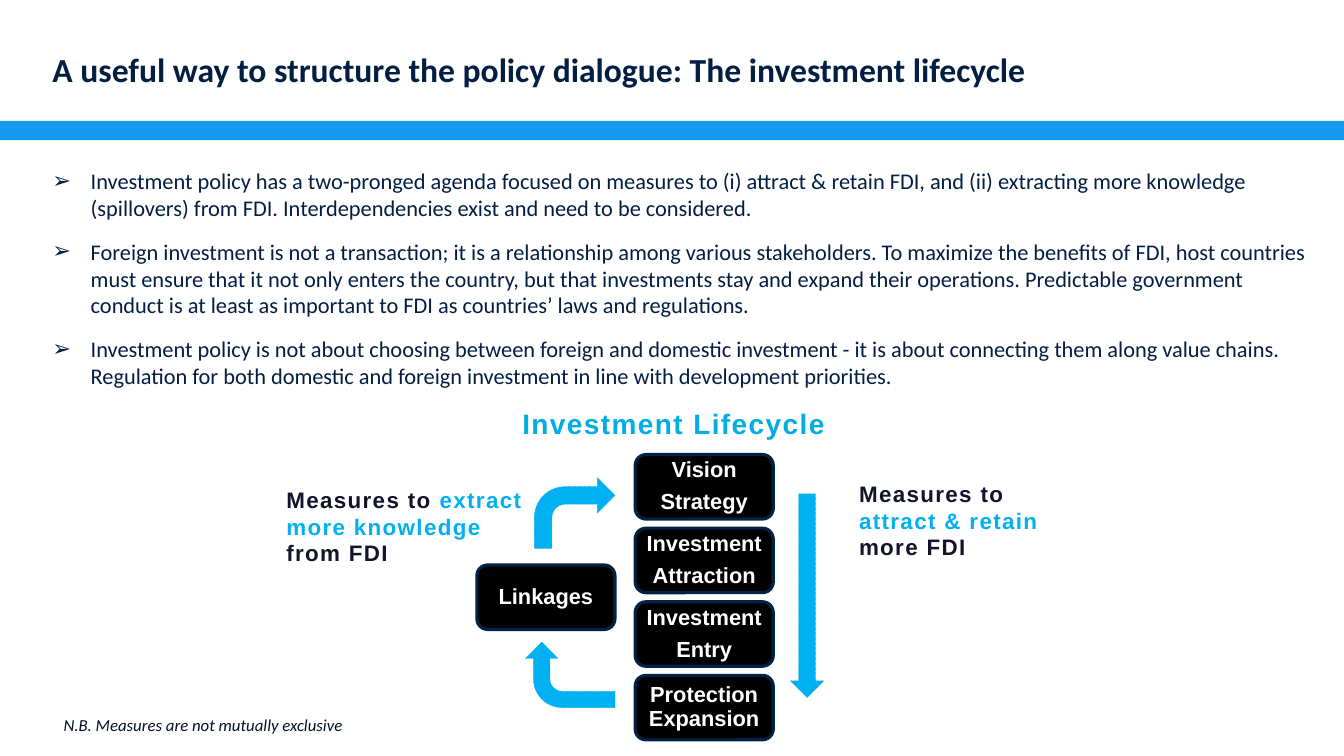
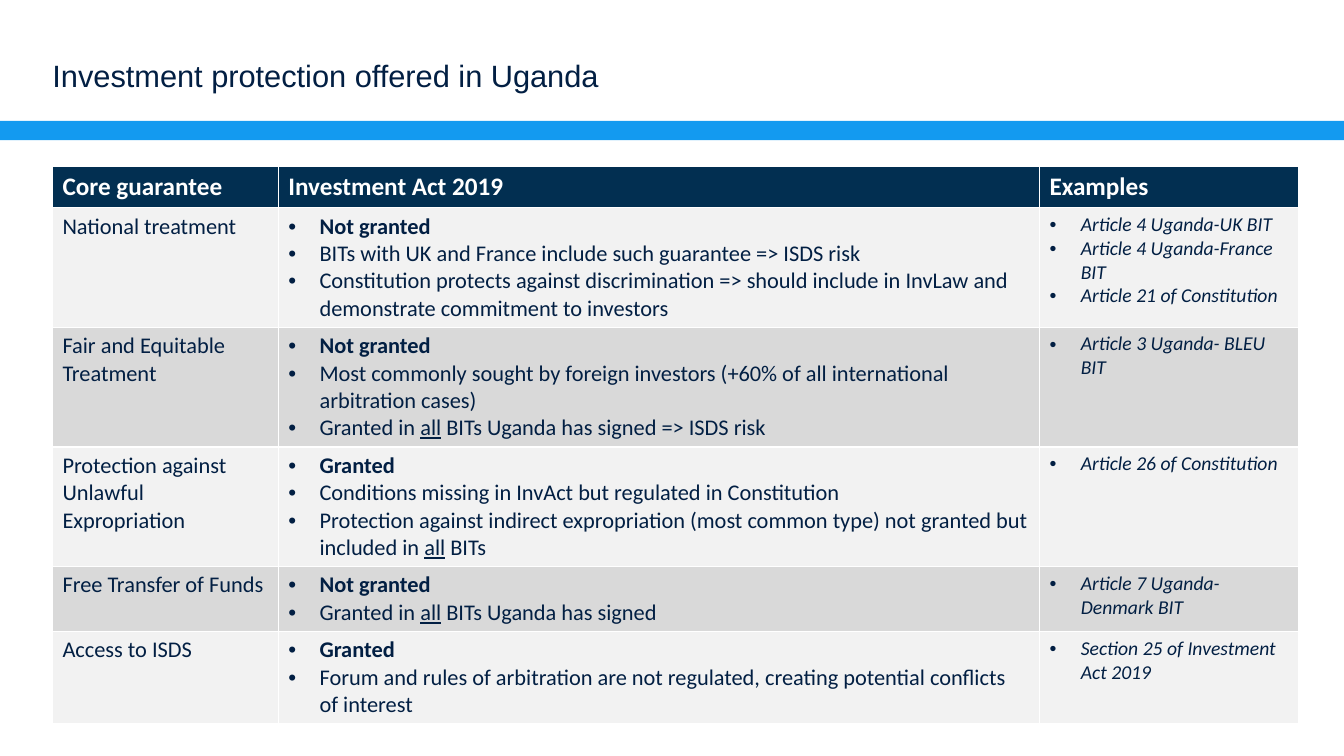
from dataclasses import dataclass

from lxml import etree
from pptx import Presentation
from pptx.dml.color import RGBColor
from pptx.enum.dml import MSO_LINE
from pptx.enum.shapes import MSO_SHAPE
from pptx.enum.text import MSO_ANCHOR, MSO_AUTO_SIZE, PP_ALIGN
from pptx.oxml.ns import qn
from pptx.util import Inches, Pt

LEFT, CENTER = PP_ALIGN.LEFT, PP_ALIGN.CENTER
TOP, MIDDLE = MSO_ANCHOR.TOP, MSO_ANCHOR.MIDDLE
NO_AUTOFIT = MSO_AUTO_SIZE.NONE
ROUND_DOT = MSO_LINE.ROUND_DOT
RECTANGLE = MSO_SHAPE.RECTANGLE
ROUNDED = MSO_SHAPE.ROUNDED_RECTANGLE
BENT_ARROW, DOWN_ARROW = MSO_SHAPE.BENT_ARROW, MSO_SHAPE.DOWN_ARROW

COLORS = {
    "band": "139AF0", "navy": "021F43", "note": "031227", "ink": "121429",
    "heading": "00ADE4", "cycle": "00B0F0", "box": "000000", "box_line": "002345",
    "white": "FFFFFF", "header": "022F51", "row_odd": "F2F2F2", "row_even": "D9D9D9",
}

SLIDE_W, SLIDE_H = 13.33, 7.5
MARGIN = 0.52
BAND_TOP, BAND_H = 0.16 * SLIDE_H, 0.19
TITLE_W, TITLE_H = SLIDE_W - 2 * MARGIN, 0.83

# The lifecycle column: boxes of one size at an equal pitch
STEP_X, STEP_Y, STEP_PITCH = 6.3, 4.51, 0.73
STEP_W, STEP_H = 1.37, 0.64
LINKAGES_X = STEP_X - 1.57
LINKAGES_Y = STEP_Y + 1.5 * STEP_PITCH

TABLE_TOP = 1.65
COLUMN_WIDTHS = (2.24, 7.55, 2.57)
HEADER_H, LINE_H, CELL_PADDING = 0.41, 0.27, 0.1


@dataclass(frozen=True)
class Box:
    x: float
    y: float
    w: float
    h: float

    def emu(self) -> tuple:
        return tuple(Inches(v) for v in (self.x, self.y, self.w, self.h))


@dataclass(frozen=True)
class TextStyle:
    size: float
    color: str
    font: str = "Calibri"
    bold: bool = False
    italic: bool = False
    spacing: int = 0  # hundredths of a point


@dataclass(frozen=True)
class Step:
    lines: tuple
    x: float
    y: float


@dataclass(frozen=True)
class Arrow:
    preset: int
    box: Box
    rotation: float = 0


@dataclass(frozen=True)
class Label:
    """Text between bars is shown in the accent colour."""
    text: str
    box: Box
    style: TextStyle
    align: int = LEFT


@dataclass(frozen=True)
class Guarantee:
    """Text between bars is underlined; line_count is that of the tallest cell."""
    name: str
    verdict: str
    remarks: tuple
    examples: tuple
    line_count: int


BODY = TextStyle(16, "navy")
STEP_TEXT = TextStyle(15.6, "white", "Arial", bold=True)
SIDE_TEXT = TextStyle(16, "ink", "Arial", bold=True, spacing=100)
EXAMPLE = TextStyle(14, "navy", italic=True)
HEADER = TextStyle(18, "white", bold=True)

POLICY_POINTS = (
    "Investment policy has a two-pronged agenda focused on measures to (i) attract & retain FDI, "
    "and (ii) extracting more knowledge (spillovers) from FDI. Interdependencies exist and need to "
    "be considered.",
    "Foreign investment is not a transaction; it is a relationship among various stakeholders. To "
    "maximize the benefits of FDI, host countries must ensure that it not only enters the country, "
    "but that investments stay and expand their operations. Predictable government conduct is at "
    "least as important to FDI as countries’ laws and regulations.",
    "Investment policy is not about choosing between foreign and domestic investment - it is about "
    "connecting them along value chains. Regulation for both domestic and foreign investment in "
    "line with development priorities.",
)

STAGES = (("Vision", "Strategy"), ("Investment", "Attraction"),
          ("Investment", "Entry"), ("Protection Expansion",))
STEPS = [Step(lines, STEP_X, STEP_Y + i * STEP_PITCH) for i, lines in enumerate(STAGES)]
STEPS.append(Step(("Linkages",), LINKAGES_X, LINKAGES_Y))

ARROWS = (
    Arrow(BENT_ARROW, Box(5.3, 4.74, 0.8, 0.7)),
    Arrow(BENT_ARROW, Box(5.33, 6.25, 0.65, 0.89), 270),
    Arrow(DOWN_ARROW, Box(7.84, 4.9, 0.33, 2.02)),
)

LABELS = (
    Label("Investment Lifecycle", Box(4.69, 4.03, 3.98, 0.33),
          TextStyle(20, "heading", "Arial", bold=True, spacing=100), CENTER),
    Label("Measures to |attract & retain |more FDI", Box(8.52, 4.76, 1.91, 0.8), SIDE_TEXT),
    Label("Measures to |extract more knowledge |from FDI", Box(2.84, 4.82, 2.47, 0.8), SIDE_TEXT),
    Label("N.B. Measures are not mutually exclusive", Box(0.63, 7.09, 5.15, 0.2),
          TextStyle(12, "note", italic=True)),
)

TABLE_HEADINGS = ("Core guarantee", "Investment Act 2019", "Examples")
GUARANTEES = (
    Guarantee("National treatment", "Not granted",
              ("BITs with UK and France include such guarantee => ISDS risk",
               "Constitution protects against discrimination => should include in InvLaw and "
               "demonstrate commitment to investors"),
              ("Article 4 Uganda-UK BIT", "Article 4 Uganda-France BIT",
               "Article 21 of Constitution"), 4),
    Guarantee("Fair and Equitable Treatment", "Not granted",
              ("Most commonly sought by foreign investors (+60% of all international "
               "arbitration cases)",
               "Granted in |all| BITs Uganda has signed => ISDS risk"),
              ("Article 3 Uganda- BLEU BIT",), 4),
    Guarantee("Protection against Unlawful Expropriation", "Granted",
              ("Conditions missing in InvAct but regulated in Constitution",
               "Protection against indirect expropriation (most common type) not granted but "
               "included in |all| BITs"),
              ("Article 26 of Constitution",), 4),
    Guarantee("Free Transfer of Funds", "Not granted",
              ("Granted in |all| BITs Uganda has signed",),
              ("Article 7 Uganda- Denmark BIT",), 2),
    Guarantee("Access to ISDS", "Granted",
              ("Forum and rules of arbitration are not regulated, creating potential conflicts "
               "of interest",),
              ("Section 25 of Investment Act 2019",), 3),
)


def rgb(name: str) -> RGBColor:
    return RGBColor.from_string(COLORS[name])


def style_paragraph(paragraph, style: TextStyle, align=LEFT) -> None:
    paragraph.alignment = align
    font = paragraph.font
    font.name, font.size = style.font, Pt(style.size)
    font.bold, font.italic = style.bold, style.italic
    font.color.rgb = rgb(style.color)
    if style.spacing:
        paragraph._p.pPr.find(qn("a:defRPr")).set("spc", str(style.spacing))


def add_runs(paragraph, text: str) -> list:
    """Add a run for each part between bars and return every second one."""
    runs = []
    for part in text.split("|"):
        run = paragraph.add_run()
        run.text = part
        runs.append(run)
    return runs[1::2]


def set_bullet(paragraph, symbol: str, indent: float) -> None:
    properties = paragraph._p.get_or_add_pPr()
    properties.set("marL", str(Inches(indent)))
    properties.set("indent", str(-Inches(indent)))
    etree.SubElement(properties, qn("a:buFont")).set("typeface", "Arial")
    etree.SubElement(properties, qn("a:buChar")).set("char", symbol)


def next_paragraph(frame, index: int):
    return frame.add_paragraph() if index else frame.paragraphs[0]


def prepare_frame(frame, inset: float = 0, anchor=TOP) -> None:
    frame.word_wrap = True
    frame.auto_size = NO_AUTOFIT
    frame.vertical_anchor = anchor
    frame.margin_left = frame.margin_right = Inches(inset)
    frame.margin_top = frame.margin_bottom = Inches(inset)


def place(shape, box: Box) -> None:
    shape.left, shape.top, shape.width, shape.height = box.emu()


def add_filled(slide, preset, box: Box, fill: str):
    shape = slide.shapes.add_shape(preset, *box.emu())
    shape.shadow.inherit = False
    shape.fill.solid()
    shape.fill.fore_color.rgb = rgb(fill)
    shape.line.fill.background()
    return shape


def add_band_to_master(slide, master) -> None:
    band = add_filled(slide, RECTANGLE, Box(0, BAND_TOP, SLIDE_W, BAND_H), "band")
    band.element.nvSpPr.cNvPr.set("id", "20")
    master.shapes.element.append(band.element)


def set_title(slide, text: str, style: TextStyle, top: float) -> None:
    title = slide.shapes.title
    place(title, Box(MARGIN, top, TITLE_W, TITLE_H))
    prepare_frame(title.text_frame, anchor=MIDDLE)
    paragraph = title.text_frame.paragraphs[0]
    add_runs(paragraph, text)
    style_paragraph(paragraph, style)


def fill_policy_points(body) -> None:
    place(body, Box(MARGIN, 1.66, 12.57, 1.86))
    prepare_frame(body.text_frame)
    for i, point in enumerate(POLICY_POINTS):
        paragraph = next_paragraph(body.text_frame, i)
        set_bullet(paragraph, "➢", 0.38)
        add_runs(paragraph, point)
        style_paragraph(paragraph, BODY)
        paragraph.space_before, paragraph.space_after = Pt(0), Pt(12)


def add_label(slide, label: Label) -> None:
    frame = slide.shapes.add_textbox(*label.box.emu()).text_frame
    prepare_frame(frame)
    paragraph = frame.paragraphs[0]
    for accent in add_runs(paragraph, label.text):
        accent.font.color.rgb = rgb("cycle")
    style_paragraph(paragraph, label.style, label.align)


def add_step(slide, step: Step) -> None:
    shape = add_filled(slide, ROUNDED, Box(step.x, step.y, STEP_W, STEP_H), "box")
    shape.line.color.rgb = rgb("box_line")
    shape.line.width = Pt(2.25)
    prepare_frame(shape.text_frame, 0.06, MIDDLE)
    for i, line in enumerate(step.lines):
        paragraph = next_paragraph(shape.text_frame, i)
        add_runs(paragraph, line)
        style_paragraph(paragraph, STEP_TEXT, CENTER)
        paragraph.line_spacing, paragraph.space_after = 0.9, Pt(6)


def add_arrow(slide, arrow: Arrow) -> None:
    shape = add_filled(slide, arrow.preset, arrow.box, "cycle")
    shape.rotation = arrow.rotation
    shape.line.color.rgb = rgb("cycle")
    shape.line.width = Pt(0.25)
    shape.line.dash_style = ROUND_DOT


def fill_cell(cell, texts: tuple, style: TextStyle, fill: str, bulleted: bool = False) -> None:
    cell.fill.solid()
    cell.fill.fore_color.rgb = rgb(fill)
    for i, text in enumerate(texts):
        paragraph = next_paragraph(cell.text_frame, i)
        if bulleted:
            set_bullet(paragraph, "•", 0.31)
        for underlined in add_runs(paragraph, text):
            underlined.font.underline = True
        style_paragraph(paragraph, style)


def add_guarantee_table(slide) -> None:
    heights = [HEADER_H] + [g.line_count * LINE_H + CELL_PADDING for g in GUARANTEES]
    box = Box(MARGIN, TABLE_TOP, sum(COLUMN_WIDTHS), sum(heights))
    table = slide.shapes.add_table(len(heights), len(COLUMN_WIDTHS), *box.emu()).table
    for column, width in zip(table.columns, COLUMN_WIDTHS):
        column.width = Inches(width)
    for row, height in zip(table.rows, heights):
        row.height = Inches(height)
    for i, heading in enumerate(TABLE_HEADINGS):
        fill_cell(table.cell(0, i), (heading,), HEADER, "header")
    for i, item in enumerate(GUARANTEES, start=1):
        fill = "row_odd" if i % 2 else "row_even"
        act = table.cell(i, 1)
        fill_cell(table.cell(i, 0), (item.name,), BODY, fill)
        fill_cell(act, (item.verdict, *item.remarks), BODY, fill, bulleted=True)
        act.text_frame.paragraphs[0].font.bold = True
        fill_cell(table.cell(i, 2), item.examples, EXAMPLE, fill, bulleted=True)


def main() -> None:
    prs = Presentation()
    prs.slide_width, prs.slide_height = Inches(SLIDE_W), Inches(SLIDE_H)

    lifecycle = prs.slides.add_slide(prs.slide_layouts[1])
    add_band_to_master(lifecycle, prs.slide_master)
    set_title(lifecycle, "A useful way to structure the policy dialogue: The investment lifecycle",
              TextStyle(24, "navy", bold=True), 0.27)
    fill_policy_points(lifecycle.placeholders[1])
    for step in STEPS:
        add_step(lifecycle, step)
    for arrow in ARROWS:
        add_arrow(lifecycle, arrow)
    for label in LABELS:
        add_label(lifecycle, label)

    protection = prs.slides.add_slide(prs.slide_layouts[5])
    set_title(protection, "Investment protection offered in Uganda",
              TextStyle(22, "navy", "Arial"), 0.33)
    add_guarantee_table(protection)

    prs.save("out.pptx")


if __name__ == "__main__":
    main()
